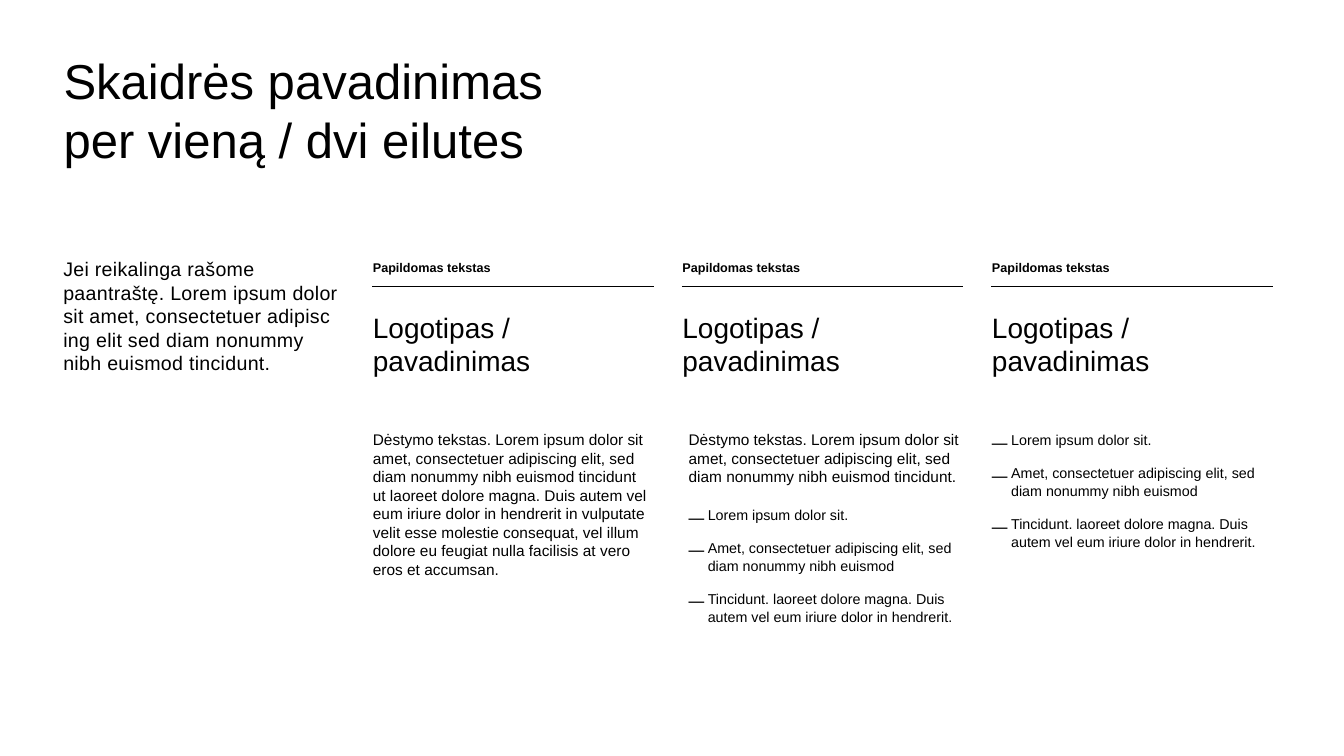
from lxml import etree
from pptx import Presentation
from pptx.dml.color import RGBColor
from pptx.enum.shapes import MSO_CONNECTOR
from pptx.enum.text import MSO_ANCHOR, MSO_AUTO_SIZE, PP_ALIGN
from pptx.oxml.ns import qn
from pptx.util import Inches, Pt

STRAIGHT = MSO_CONNECTOR.STRAIGHT
TOP = MSO_ANCHOR.TOP
LEFT = PP_ALIGN.LEFT
NO_FIT = MSO_AUTO_SIZE.NONE

LABEL = "Papildomas tekstas"
HEADING = "Logotipas / pavadinimas"
SUBTITLE = (
    "Jei reikalinga rašome paantraštę. Lorem ipsum dolor sit amet, "
    "consectetuer adipisc ing elit sed diam nonummy nibh euismod tincidunt."
)
INTRO = (
    "Dėstymo tekstas. Lorem ipsum dolor sit amet, consectetuer adipiscing elit, "
    "sed diam nonummy nibh euismod tincidunt"
)
LONG_TEXT = INTRO + (
    " ut laoreet dolore magna. Duis autem vel eum iriure dolor in hendrerit in "
    "vulputate velit esse molestie consequat, vel illum dolore eu feugiat nulla "
    "facilisis at vero eros et accumsan."
)
POINTS = [
    "Lorem ipsum dolor sit.",
    "Amet, consectetuer adipiscing elit, sed diam nonummy nibh euismod",
    "Tincidunt. laoreet dolore magna. Duis autem vel eum iriure dolor in hendrerit.",
]


def color(value):
    return RGBColor.from_string(value)


class ColumnSlide:
    """Draws text and rules on a grid of wide columns and tenth-inch rows."""

    font_name = "Arial"
    ink = "000000"
    margin, column, row = 0.53, 3.07, 0.1

    def __init__(self, deck):
        self.slide = deck.slides.add_slide(deck.slide_layouts[5])

    def place(self, col, row, cols, rows):
        return (
            Inches(self.margin + col * self.column),
            Inches(row * self.row),
            Inches(cols * self.column),
            Inches(rows * self.row),
        )

    def style(self, paragraph, size, leading, bold=False):
        paragraph.alignment = LEFT
        paragraph.line_spacing = leading
        paragraph.font.name = self.font_name
        paragraph.font.size = Pt(size)
        paragraph.font.bold = bold
        paragraph.font.color.rgb = color(self.ink)

    def title(self, wording, area, size, leading):
        title = self.slide.shapes.title
        title.left, title.top, title.width, title.height = self.place(*area)
        frame = title.text_frame
        frame.text = wording
        frame.word_wrap = True
        frame.auto_size = NO_FIT
        frame.vertical_anchor = TOP
        self.style(frame.paragraphs[0], size, leading)

    def text(self, wording, area, size, leading, bold=False, tracking=0):
        frame = self.slide.shapes.add_textbox(*self.place(*area)).text_frame
        frame.word_wrap = True
        paragraph = frame.paragraphs[0]
        run = paragraph.add_run()
        run.text = wording
        if tracking:
            run._r.get_or_add_rPr().set("spc", str(tracking))
        self.style(paragraph, size, leading, bold)

    def dashes(self, points, area, size, leading):
        frame = self.slide.shapes.add_textbox(*self.place(*area)).text_frame
        frame.word_wrap = True
        frame.text = "\n".join(points)
        for paragraph in frame.paragraphs:
            props = paragraph._p.get_or_add_pPr()
            props.set("marL", str(Inches(0.19)))
            props.set("indent", str(-Inches(0.19)))
            etree.SubElement(props, qn("a:buSzPct")).set("val", "110000")
            etree.SubElement(props, qn("a:buFont")).set("typeface", self.font_name)
            etree.SubElement(props, qn("a:buChar")).set("char", "⎼")
            paragraph.space_after = Pt(10)
            self.style(paragraph, size, leading)

    def rule(self, col, row, cols):
        left, top, width, _ = self.place(col, row, cols, 0)
        rule = self.slide.shapes.add_connector(STRAIGHT, left, top, left + width, top)
        rule.line.color.rgb = color(self.ink)
        rule.line.width = Pt(1)
        etree.SubElement(rule._element.spPr, qn("a:effectLst"))


def main():
    deck = Presentation()
    deck.slide_width, deck.slide_height = Inches(13.33), Inches(7.5)
    page = ColumnSlide(deck)

    page.title("Skaidrės pavadinimas per vieną / dvi eilutes", (0, 4.5, 1.74, 13.8), 35, Pt(42))
    page.text(SUBTITLE, (0, 25, 0.97, 9.4), 14, Pt(16.8), tracking=20)

    for col in (1, 2, 3):
        page.text(LABEL, (col, 25.6, 0.97, 2.3), 9, 0.8, bold=True)
        page.rule(col + 0.03, 28.4, 0.91)
        page.text(HEADING, (col, 30.5, 0.97, 7.8), 20, Pt(23))

    page.text(LONG_TEXT, (1, 42.2, 0.97, 21.4), 11, Pt(13.2))
    page.text(INTRO + ".", (2.02, 42.2, 0.95, 6.2), 11, Pt(13.2))
    for col, row in ((2.02, 49.6), (3, 42.2)):
        page.dashes(POINTS, (col, row, 0.95, 14.1), 10.2, Pt(13.2))

    deck.save("out.pptx")


if __name__ == "__main__":
    main()
